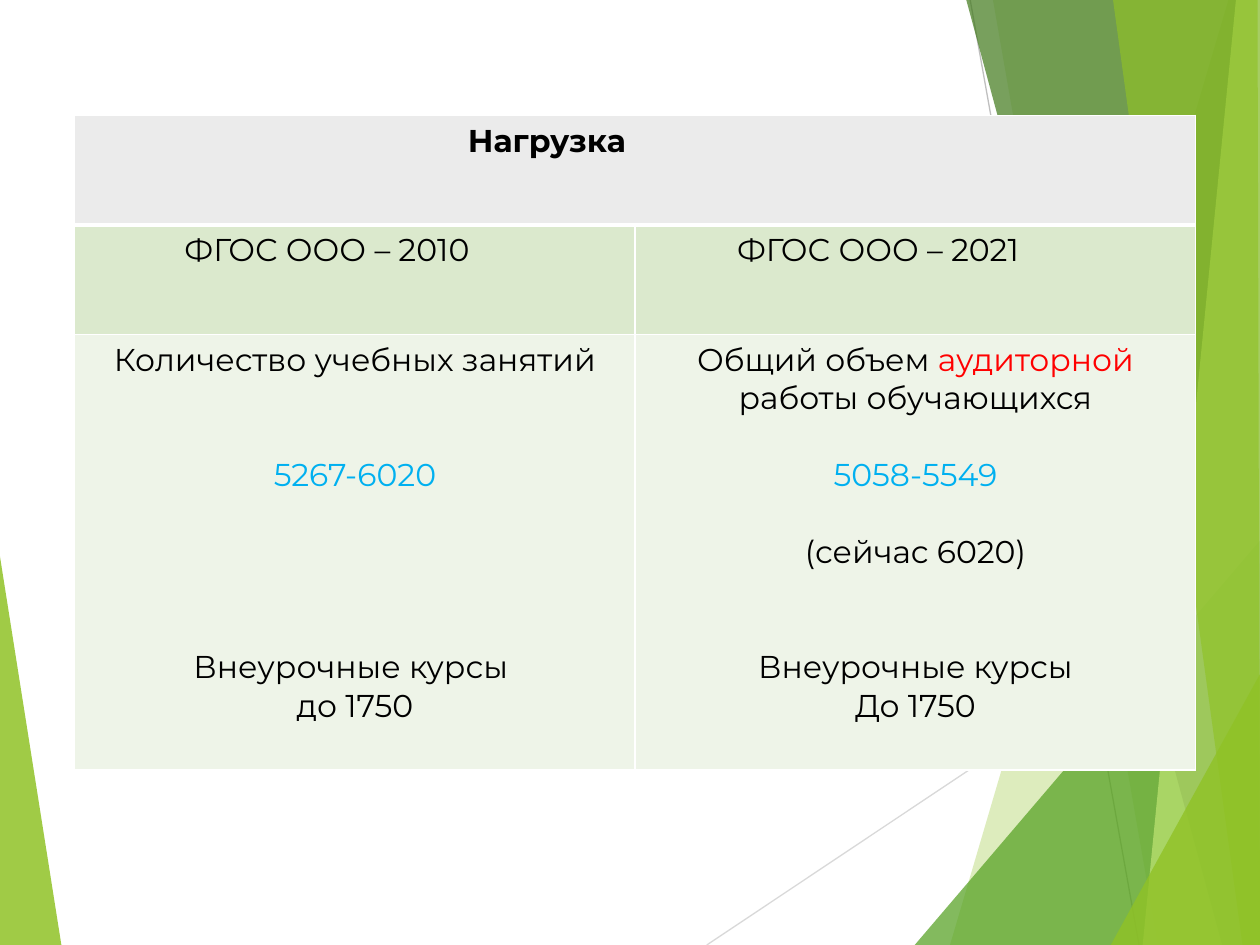
from lxml.etree import SubElement
from pptx import Presentation
from pptx.dml.color import RGBColor
from pptx.enum.shapes import MSO_CONNECTOR as Connector
from pptx.enum.text import PP_ALIGN as Align
from pptx.oxml.ns import qn
from pptx.util import Pt

WHITE = RGBColor(0xFF, 0xFF, 0xFF)
BLACK = RGBColor(0x00, 0x00, 0x00)
RED = RGBColor(0xFF, 0x00, 0x00)
BLUE = RGBColor(0x00, 0xB0, 0xF0)
HEADER_GRAY = RGBColor(0xEB, 0xEB, 0xEB)
BAND_GREEN = RGBColor(0xDB, 0xE9, 0xCD)
PALE_GREEN = RGBColor(0xEE, 0xF4, 0xE8)
LIME = RGBColor(0x90, 0xC2, 0x26)
LIGHT_LIME = RGBColor(0xC0, 0xE4, 0x74)
GREEN = RGBColor(0x54, 0xA0, 0x21)
DARK_GREEN = RGBColor(0x3F, 0x78, 0x19)
LIGHT_GRAY = RGBColor(0xD9, 0xD9, 0xD9)
MID_GRAY = RGBColor(0xBF, 0xBF, 0xBF)

FONT = "Montserrat"
LINE_HEIGHT = 21.94
WIDTH, HEIGHT = 720, 540

RAYS = [
    ((403.9, HEIGHT), (WIDTH, 329), LIGHT_GRAY),
    ((554.4, 0), (650.9, HEIGHT), MID_GRAY),
]
LEFT_FACET = ([(0, 318), (35.1, HEIGHT), (0, HEIGHT)], LIME, 85)
RIGHT_FACETS = [
    ([(702, 0), (542.9, HEIGHT), (WIDTH, HEIGHT), (WIDTH, 0)], LIME, 30),
    ([(567.4, 0), (661.7, HEIGHT), (WIDTH, HEIGHT), (WIDTH, 0)], LIME, 20),
    ([(522.7, HEIGHT), (WIDTH, 308.9), (WIDTH, HEIGHT)], GREEN, 72),
    ([(552.2, 0), (698.4, HEIGHT), (WIDTH, HEIGHT), (WIDTH, 0)], DARK_GREEN, 70),
    ([(706.3, 0), (653, HEIGHT), (WIDTH, HEIGHT), (WIDTH, 0)], LIGHT_LIME, 70),
    ([(636, 0), (710, HEIGHT), (WIDTH, HEIGHT), (718.6, 0)], LIME, 65),
    ([(634.7, HEIGHT), (WIDTH, 385.2), (WIDTH, HEIGHT)], LIME, 80),
]

LESSONS_2010 = [
    (0, [("Количество учебных занятий", BLACK)]),
    (2, [("5267-6020", BLUE)]),
    (4, [("Внеурочные курсы ", BLACK)]),
    (0, [("до 1750", BLACK)]),
]
LESSONS_2021 = [
    (0, [("Общий объем ", BLACK), ("аудиторной", RED), (" работы обучающихся", BLACK)]),
    (1, [("5058-5549", BLUE)]),
    (1, [("(сейчас 6020)", BLACK)]),
    (2, [("Внеурочные курсы", BLACK)]),
    (0, [("До 1750", BLACK)]),
]


def add_facet(slide, left, top, points, color, opacity):
    """Draw a translucent polygon offset by left and top."""
    (start_x, start_y), *others = [(Pt(left + x), Pt(top + y)) for x, y in points]
    builder = slide.shapes.build_freeform(start_x, start_y)
    builder.add_line_segments(others, close=True)
    shape = builder.convert_to_shape()
    shape.shadow.inherit = False
    shape.line.fill.background()
    shape.fill.solid()
    shape.fill.fore_color.rgb = color
    color_element = shape.fill._xPr.find(qn("a:solidFill"))[0]
    SubElement(color_element, qn("a:alpha")).set("val", str(opacity * 1000))


def add_ray(slide, left, top, start, end, color):
    """Draw a thin straight line offset by left and top."""
    ends = [Pt(value) for x, y in (start, end) for value in (left + x, top + y)]
    line = slide.shapes.add_connector(Connector.STRAIGHT, *ends)
    line.line.color.rgb = color
    line.line.width = Pt(0.75)
    SubElement(line._element.spPr, qn("a:effectLst"))


def add_backdrop(slide, left, top):
    """Place the green facets and the rays behind the content."""
    add_facet(slide, left, top, *LEFT_FACET)
    for ray in RAYS:
        add_ray(slide, left, top, *ray)
    for facet in RIGHT_FACETS:
        add_facet(slide, left, top, *facet)


def format_cell(cell, fill, top_width=1, bottom_width=1):
    """Give a cell its white borders and fill."""
    properties = cell._tc.get_or_add_tcPr()
    widths = {"L": 1, "R": 1, "T": top_width, "B": bottom_width}
    for side, width in widths.items():
        border = SubElement(properties, qn(f"a:ln{side}"), w=str(Pt(width)))
        border_fill = SubElement(border, qn("a:solidFill"))
        SubElement(border_fill, qn("a:srgbClr"), val=str(WHITE))
    cell.fill.solid()
    cell.fill.fore_color.rgb = fill


def format_paragraph(paragraph, bold=False):
    """Apply the common table font."""
    paragraph.font.name = FONT
    paragraph.font.size = Pt(18)
    paragraph.font.bold = bold


def write_heading(cell, text, indent, bold=False):
    """Write a left-aligned heading with an indent."""
    paragraph = cell.text_frame.paragraphs[0]
    paragraph.text = text
    paragraph._p.get_or_add_pPr().set("marL", str(Pt(indent)))
    format_paragraph(paragraph, bold)
    paragraph.font.color.rgb = BLACK


def write_details(cell, entries):
    """Write centred paragraphs separated by whole line heights."""
    frame = cell.text_frame
    for index, (gap_lines, runs) in enumerate(entries):
        paragraph = frame.add_paragraph() if index else frame.paragraphs[0]
        paragraph.alignment = Align.CENTER
        paragraph.space_before = Pt(gap_lines * LINE_HEIGHT)
        format_paragraph(paragraph)
        for text, color in runs:
            run = paragraph.add_run()
            run.text = text
            run.font.color.rgb = color


def add_load_table(slide, left, top, width, height):
    """Build the study load comparison table."""
    frame = slide.shapes.add_table(3, 2, Pt(left), Pt(top), Pt(width), Pt(height))
    table = frame.table
    heading_height = 62.64
    for column in table.columns:
        column.width = Pt(width / 2)
    row_heights = (heading_height, heading_height, height - 2 * heading_height)
    for row, row_height in zip(table.rows, row_heights):
        row.height = Pt(row_height)
    row_styles = [(HEADER_GRAY, 1, 3), (BAND_GREEN, 3, 1), (PALE_GREEN, 1, 1)]
    for row, style in zip(table.rows, row_styles):
        for cell in row.cells:
            format_cell(cell, *style)
    table.cell(0, 0).merge(table.cell(0, 1))
    write_heading(table.cell(0, 0), "Нагрузка", 217.5, bold=True)
    write_heading(table.cell(1, 0), "ФГОС ООО – 2010", 55.5)
    write_heading(table.cell(1, 1), "ФГОС ООО – 2021", 51)
    write_details(table.cell(2, 0), LESSONS_2010)
    write_details(table.cell(2, 1), LESSONS_2021)


def main():
    """Create and save the presentation."""
    presentation = Presentation()
    presentation.slide_width, presentation.slide_height = Pt(WIDTH), Pt(HEIGHT)
    slide = presentation.slides.add_slide(presentation.slide_layouts[6])
    add_backdrop(slide, 0, 0)
    add_load_table(slide, 42.7, 66, 640.6, 374)
    presentation.save("out.pptx")


if __name__ == "__main__":
    main()
